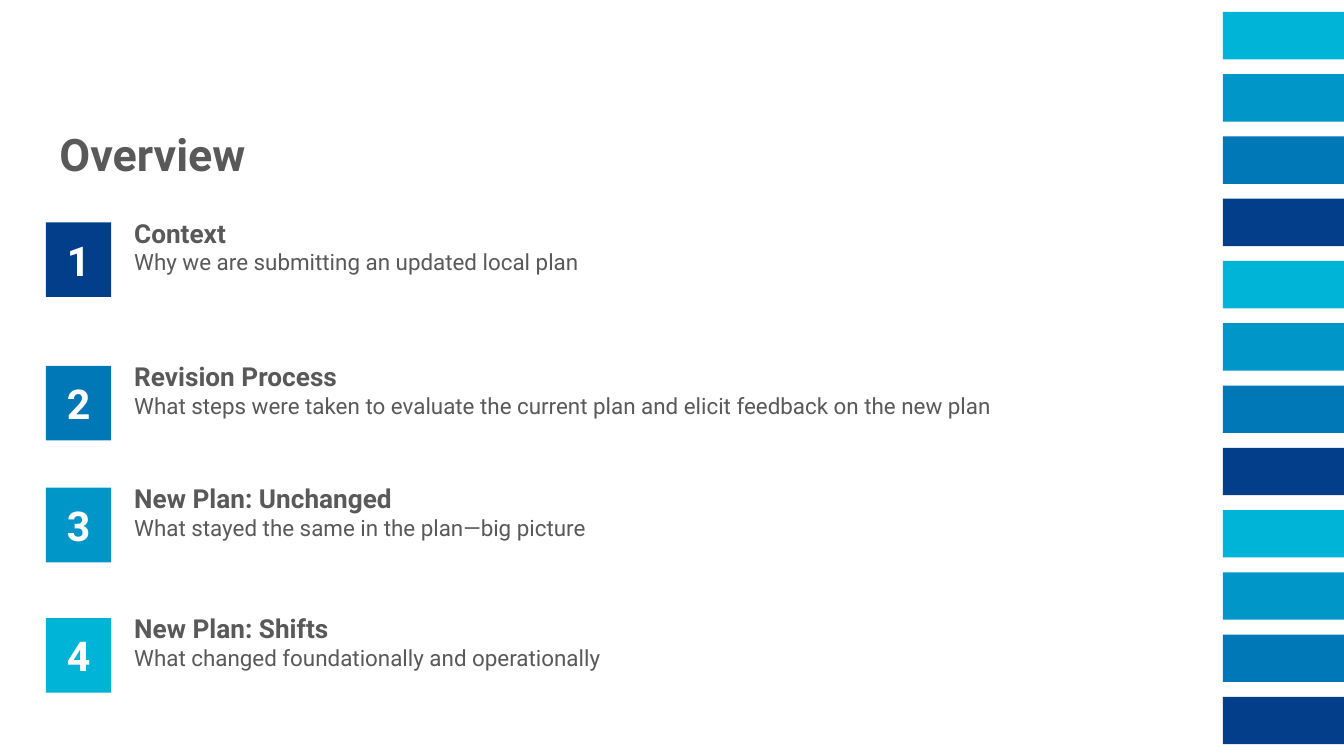
import pptx
import pptx.dml.color
import pptx.enum.shapes
import pptx.enum.text
import pptx.util

Pt = pptx.util.Pt
Align = pptx.enum.text.PP_ALIGN
Anchor = pptx.enum.text.MSO_ANCHOR

COLORS = {
    "navy": "023E8A",
    "blue": "0077B6",
    "azure": "0096C7",
    "cyan": "00B4D8",
    "text": "595959",
    "white": "FFFFFF",
}
FONT = "Roboto"
TITLE = "Overview"

# heading, description, badge colour, badge top, text width
TOPICS = [
    ("Context", "Why we are submitting an updated local plan", "navy", 119.1, 366.5),
    ("Revision Process",
     "What steps were taken to evaluate the current plan and elicit feedback on the new plan",
     "blue", 196, 504.7),
    ("New Plan: Unchanged", "What stayed the same in the plan—big picture", "azure", 261.3, 359.3),
    ("New Plan: Shifts", "What changed foundationally and operationally", "cyan", 331.1, 359.3),
]
STRIPE_CYCLE = ["cyan", "azure", "blue", "navy"]
STRIPE_COUNT = 12

SLIDE_W, SLIDE_H = 720, 405
STRIPE_LEFT, STRIPE_TOP, STRIPE_H, STRIPE_PITCH = 655.2, 6.4, 25.4, 33.36
LEFT = 24.6
BADGE_W, BADGE_H = 35, 40
TEXT_LEFT, TEXT_H = 64.8, 60
INSET = 7.2


def rgb(name):
    return pptx.dml.color.RGBColor.from_string(COLORS[name])


def write(shape, lines, color="text", align=Align.LEFT, anchor=Anchor.TOP):
    """Fill a shape with one paragraph for each (text, size, bold) line."""
    frame = shape.text_frame
    frame.word_wrap = True
    frame.auto_size = pptx.enum.text.MSO_AUTO_SIZE.NONE
    frame.vertical_anchor = anchor
    frame.margin_left = frame.margin_right = Pt(INSET)
    frame.margin_top = frame.margin_bottom = Pt(INSET)
    for index, (text, size, bold) in enumerate(lines):
        paragraph = frame.add_paragraph() if index else frame.paragraphs[0]
        paragraph.alignment = align
        paragraph.space_before = paragraph.space_after = Pt(0)
        run = paragraph.add_run()
        run.text = text
        run.font.name = FONT
        run.font.size = Pt(size)
        run.font.bold = bold
        run.font.color.rgb = rgb(color)


def add_block(slide, left, top, width, height, color):
    block = slide.shapes.add_shape(
        pptx.enum.shapes.MSO_SHAPE.RECTANGLE, Pt(left), Pt(top), Pt(width), Pt(height))
    block.shadow.inherit = False
    block.fill.solid()
    block.fill.fore_color.rgb = rgb(color)
    block.line.fill.background()
    return block


def main():
    deck = pptx.Presentation()
    deck.slide_width, deck.slide_height = Pt(SLIDE_W), Pt(SLIDE_H)
    slide = deck.slides.add_slide(deck.slide_layouts[5])
    slide.background.fill.solid()
    slide.background.fill.fore_color.rgb = rgb("white")

    for index in range(STRIPE_COUNT):
        add_block(slide, STRIPE_LEFT, STRIPE_TOP + index * STRIPE_PITCH,
                  SLIDE_W - STRIPE_LEFT, STRIPE_H, STRIPE_CYCLE[index % len(STRIPE_CYCLE)])

    title = slide.shapes.title
    title.left, title.top, title.width, title.height = Pt(LEFT), Pt(43.9), Pt(221), Pt(60)
    write(title, [(TITLE, 24, True)], anchor=Anchor.BOTTOM)

    for number, (heading, description, color, top, width) in enumerate(TOPICS, 1):
        text_top = top + (BADGE_H - TEXT_H) / 2
        topic = slide.shapes.add_textbox(Pt(TEXT_LEFT), Pt(text_top), Pt(width), Pt(TEXT_H))
        write(topic, [(heading, 14, True), (description, 12, False)])
        badge = add_block(slide, LEFT, top, BADGE_W, BADGE_H, color)
        write(badge, [(str(number), 22, True)], color="white",
              align=Align.CENTER, anchor=Anchor.MIDDLE)

    deck.save("out.pptx")


if __name__ == "__main__":
    main()
